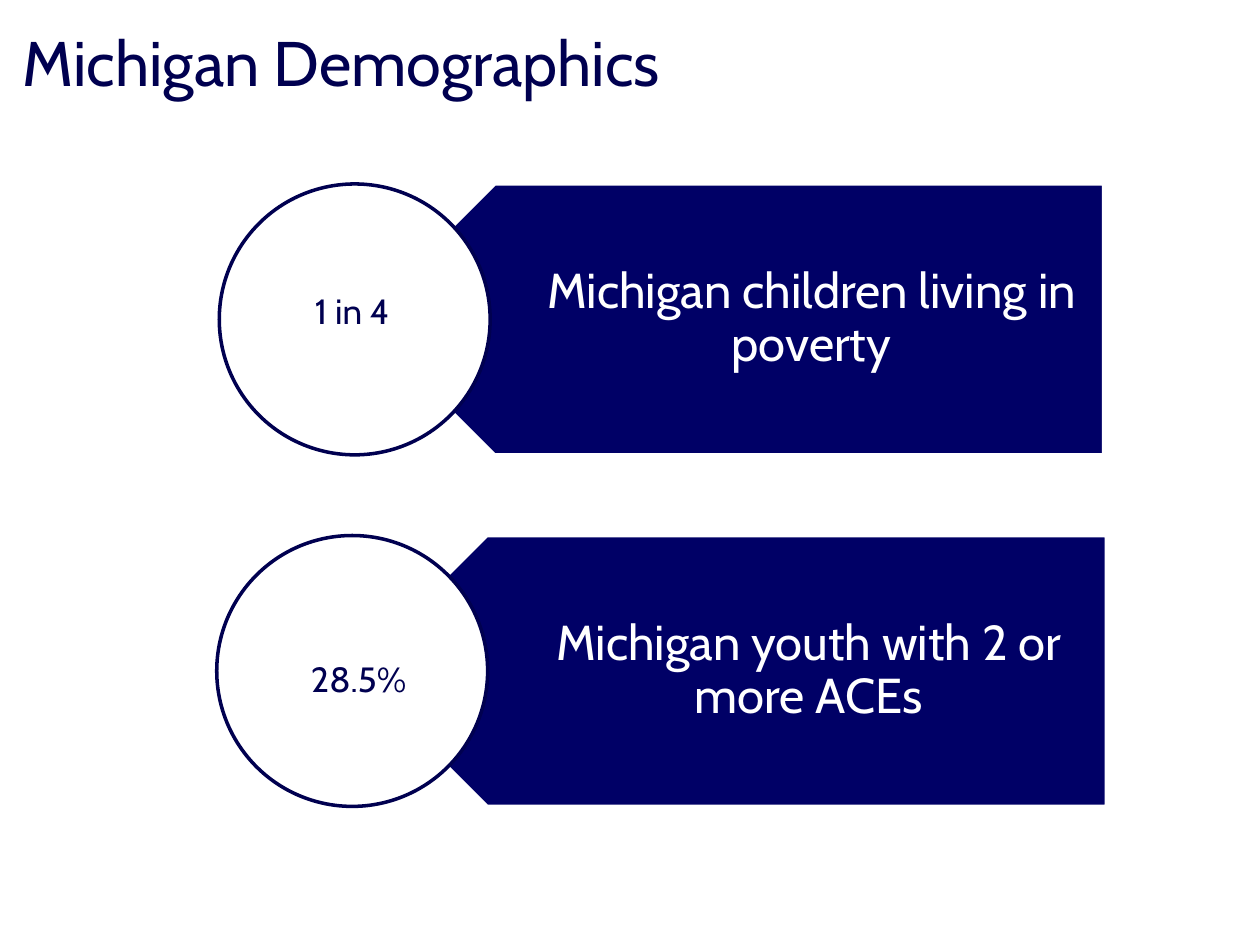
from pptx import Presentation
from pptx.dml.color import RGBColor
from pptx.enum import shapes, text
from pptx.util import Inches, Pt

NAVY = RGBColor(0x00, 0x00, 0x50)
BANNER_BLUE = RGBColor(0x00, 0x00, 0x66)
WHITE = RGBColor(0xFF, 0xFF, 0xFF)
FONT = "Cabin"
ROW_HEIGHT = 2.15
BANNER_TEXT_OFFSET = 0.54


def write_text(shape, content, size, color, alignment=text.PP_ALIGN.LEFT):
    shape.text_frame.text = content
    paragraph = shape.text_frame.paragraphs[0]
    paragraph.alignment = alignment
    font = paragraph.runs[0].font
    font.name = FONT
    font.size = Pt(size)
    font.color.rgb = color
    return paragraph


def add_title(slide, content):
    title = slide.shapes.title
    title.left, title.top = Inches(0.08), Inches(0.03)
    title.width, title.height = Inches(10), Inches(0.92)
    title.text_frame.vertical_anchor = text.MSO_ANCHOR.MIDDLE
    write_text(title, content, 36, NAVY)


def add_outlined_shape(slide, kind, left, top, width, fill, line):
    shape = slide.shapes.add_shape(
        kind, Inches(left), Inches(top), Inches(width), Inches(ROW_HEIGHT)
    )
    shape.shadow.inherit = False
    shape.fill.solid()
    shape.fill.fore_color.rgb = fill
    shape.line.color.rgb = line
    shape.line.width = Pt(2)
    return shape


def add_banner(slide, content, left, top, width):
    banner = add_outlined_shape(
        slide, shapes.MSO_SHAPE.PENTAGON, left, top, width, BANNER_BLUE, WHITE
    )
    banner.rotation = 180
    label = slide.shapes.add_textbox(
        Inches(left + BANNER_TEXT_OFFSET),
        Inches(top),
        Inches(width - BANNER_TEXT_OFFSET),
        Inches(ROW_HEIGHT),
    )
    frame = label.text_frame
    frame.word_wrap = True
    frame.vertical_anchor = text.MSO_ANCHOR.MIDDLE
    frame.margin_left, frame.margin_right = Inches(0.95), Inches(0.22)
    frame.margin_top = frame.margin_bottom = Inches(0.12)
    paragraph = write_text(label, content, 28, WHITE, text.PP_ALIGN.CENTER)
    paragraph.line_spacing = 0.9


def add_figure(slide, content, left, top, width):
    figure = slide.shapes.add_textbox(
        Inches(left), Inches(top), Inches(width), Inches(0.44)
    )
    figure.text_frame.word_wrap = True
    figure.text_frame.auto_size = text.MSO_AUTO_SIZE.SHAPE_TO_FIT_TEXT
    write_text(figure, content, 20, NAVY)


def add_statistic(slide, top, banner, circle_left, figure):
    add_banner(slide, banner[0], banner[1], top, banner[2])
    add_outlined_shape(
        slide, shapes.MSO_SHAPE.OVAL, circle_left, top, ROW_HEIGHT, WHITE, NAVY
    )
    add_figure(slide, *figure)


def main():
    presentation = Presentation()
    presentation.slide_width = Inches(10)
    presentation.slide_height = Inches(7.5)
    slide = presentation.slides.add_slide(presentation.slide_layouts[5])
    add_title(slide, "Michigan Demographics")
    add_statistic(
        slide,
        1.46,
        ("Michigan children living in poverty", 2.85, 5.91),
        1.74,
        ("1 in 4", 2.4, 2.25, 0.92),
    )
    add_statistic(
        slide,
        4.25,
        ("Michigan youth with 2 or more ACEs", 2.79, 5.99),
        1.72,
        ("28.5%", 2.37, 5.17, 1.17),
    )
    presentation.save("out.pptx")


if __name__ == "__main__":
    main()
